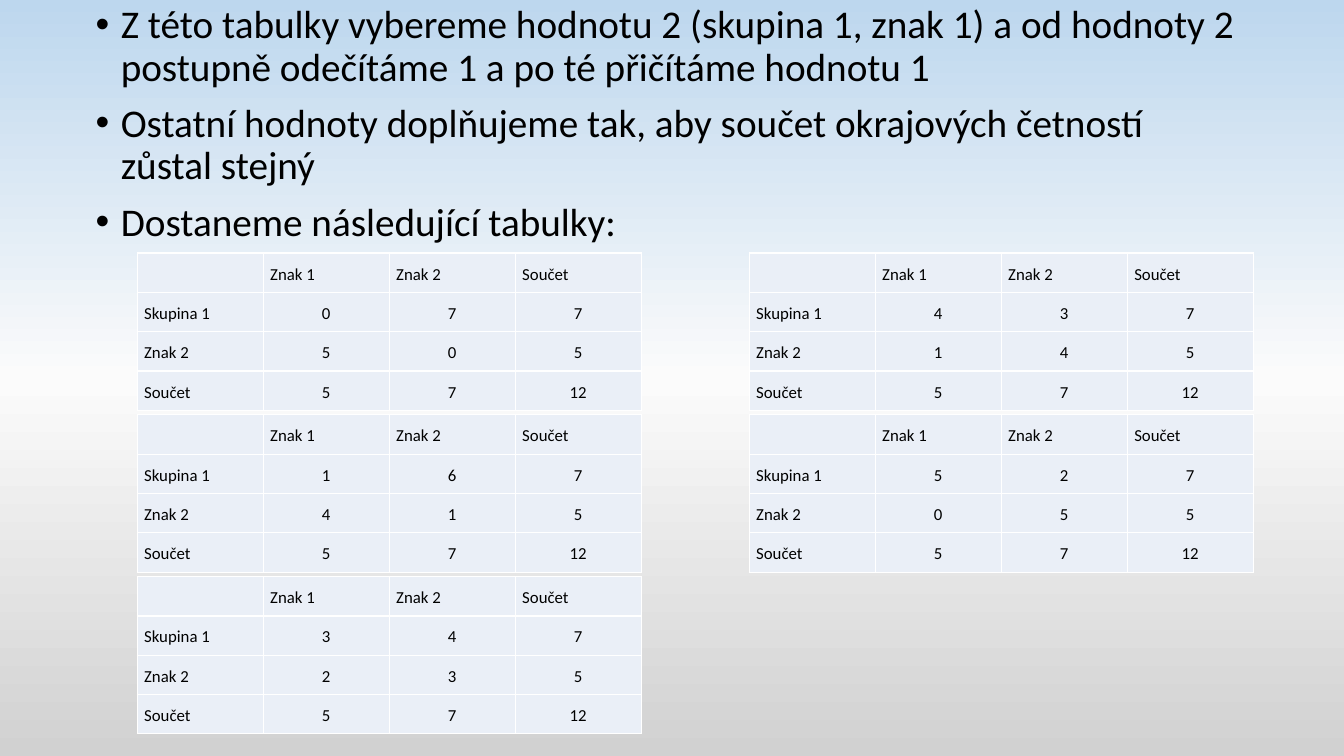
from itertools import product

from lxml import etree
from pptx import Presentation
from pptx import util as u
from pptx.dml.color import RGBColor
from pptx.enum import text
from pptx.oxml import ns

COLOURS = {
    "text": "000000",
    "cell": "EAEFF7",
    "border": "FFFFFF",
    "sky": "BDD7EE",
    "mist": "FBFBFB",
    "ground": "D1D1D1",
}
FONT = "Calibri"
POINTS = [
    "Z této tabulky vybereme hodnotu 2 (skupina 1, znak 1) a od hodnoty 2 "
    "postupně odečítáme 1 a po té přičítáme hodnotu 1",
    "Ostatní hodnoty doplňujeme tak, aby součet okrajových četností zůstal stejný",
    "Dostaneme následující tabulky:",
]
GROUP_TOTAL, REST_TOTAL, SIGN_TOTAL = 7, 5, 5
COLUMN_LEFTS = [1.36, 7.43]
FIRST_TOP, TABLE_STEP = 2.51, 1.605
COLUMN_WIDTH, ROW_HEIGHT = 1.25, 0.39
FIRST_VALUES = [0, 1, 3, 4, 5]
TABLES_PER_COLUMN = 3


def add_element(parent, tag, **attributes):
    """Append a DrawingML element and return it."""
    return etree.SubElement(parent, ns.qn(tag), **attributes)


def paint_background(page):
    """Fill the page with a vertical three-colour gradient."""
    fill = page.background.fill
    fill.gradient()
    fill.gradient_angle = 270
    stops = page.background._cSld.find(".//" + ns.qn("a:gsLst"))
    for stop in list(stops):
        stops.remove(stop)
    for position, name in ((0, "sky"), (50000, "mist"), (100000, "ground")):
        stop = add_element(stops, "a:gs", pos=str(position))
        add_element(stop, "a:srgbClr", val=COLOURS[name])


def write(para, words, size, spacing, align=None, before=None):
    """Put formatted words into a paragraph."""
    para.line_spacing = spacing
    para.alignment = align
    para.space_before = before
    if not words:
        add_element(para._p, "a:endParaRPr", sz=str(size * 100))
        return
    span = para.add_run()
    span.text = words
    span.font.size = u.Pt(size)
    span.font.name = FONT
    span.font.color.rgb = RGBColor.from_string(COLOURS["text"])


def add_points(page):
    """Add the bulleted explanation."""
    box = page.shapes.add_textbox(
        u.Inches(0.85), u.Inches(0), u.Inches(11.5), u.Inches(6.76)
    )
    frame = box.text_frame
    frame.word_wrap = True
    indent = u.Inches(0.25)
    for index, point in enumerate(POINTS):
        para = frame.add_paragraph() if index else frame.paragraphs[0]
        write(para, point, size=28, spacing=0.9, before=u.Pt(10))
        properties = para._p.get_or_add_pPr()
        properties.set("marL", str(indent))
        properties.set("indent", str(-indent))
        add_element(properties, "a:buFont", typeface="Arial")
        add_element(properties, "a:buChar", char="•")


def format_cell(cell):
    """Give a cell its borders, fill and margins."""
    properties = cell._tc.get_or_add_tcPr()
    for side in "LRTB":
        line = add_element(properties, f"a:ln{side}", w=str(u.Pt(1)))
        solid = add_element(line, "a:solidFill")
        add_element(solid, "a:srgbClr", val=COLOURS["border"])
    cell.fill.solid()
    cell.fill.fore_color.rgb = RGBColor.from_string(COLOURS["cell"])
    cell.margin_left = cell.margin_right = u.Inches(0.07)
    cell.margin_top = cell.margin_bottom = u.Inches(0.08)
    cell.vertical_anchor = text.MSO_ANCHOR.MIDDLE


def frequency_rows(first):
    """Complete the table from its first value, keeping the totals."""
    rest = SIGN_TOTAL - first
    return [
        ["", "Znak 1", "Znak 2", "Součet"],
        ["Skupina 1", first, GROUP_TOTAL - first, GROUP_TOTAL],
        ["Znak 2", rest, REST_TOTAL - rest, REST_TOTAL],
        ["Součet", SIGN_TOTAL, GROUP_TOTAL + REST_TOTAL - SIGN_TOTAL,
         GROUP_TOTAL + REST_TOTAL],
    ]


def add_frequency_table(page, left, top, first):
    """Add one four-by-four frequency table."""
    rows = frequency_rows(first)
    count = len(rows)
    table = page.shapes.add_table(
        count, count, u.Inches(left), u.Inches(top),
        u.Inches(count * COLUMN_WIDTH), u.Inches(count * ROW_HEIGHT),
    ).table
    table.first_row = table.horz_banding = False
    for row, column in product(range(count), repeat=2):
        cell = table.cell(row, column)
        format_cell(cell)
        is_value = row and column
        align = text.PP_ALIGN.CENTER if is_value else text.PP_ALIGN.JUSTIFY
        write(cell.text_frame.paragraphs[0], str(rows[row][column]),
              size=12, spacing=1.15, align=align)


def main():
    """Build and save the deck."""
    deck = Presentation()
    deck.slide_width, deck.slide_height = u.Inches(13.33), u.Inches(7.5)
    page = deck.slides.add_slide(deck.slide_layouts[6])
    paint_background(page)
    add_points(page)
    for index, first in enumerate(FIRST_VALUES):
        column, row = divmod(index, TABLES_PER_COLUMN)
        add_frequency_table(
            page, COLUMN_LEFTS[column], FIRST_TOP + row * TABLE_STEP, first
        )
    deck.save("out.pptx")


if __name__ == "__main__":
    main()
